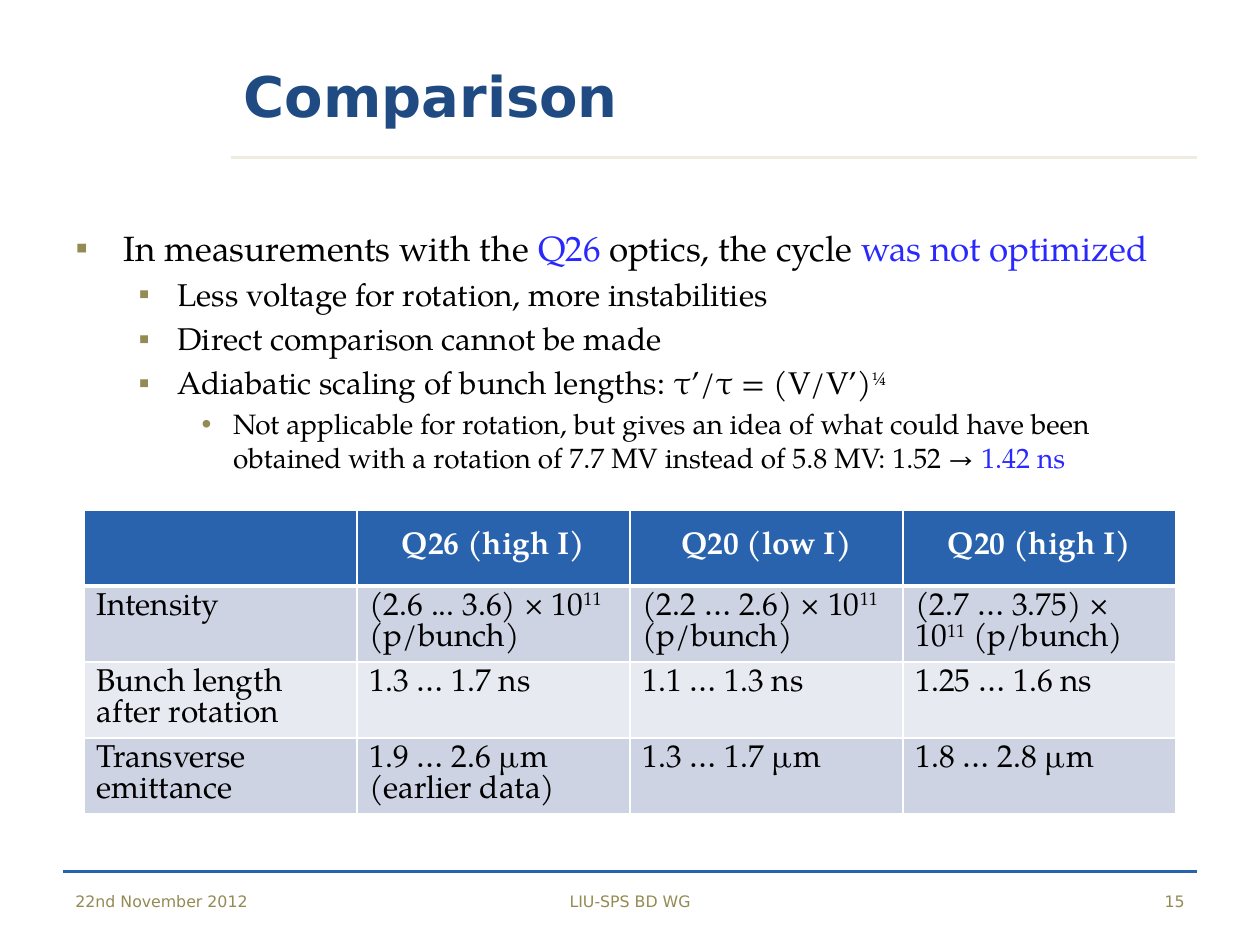
from lxml import etree
from pptx import Presentation
from pptx.dml.color import RGBColor
from pptx.enum.shapes import MSO_CONNECTOR
from pptx.enum.text import MSO_ANCHOR, PP_ALIGN
from pptx.oxml.ns import qn
from pptx.util import Inches, Pt

LEFT, CENTER, RIGHT = PP_ALIGN.LEFT, PP_ALIGN.CENTER, PP_ALIGN.RIGHT
MIDDLE, TOP = MSO_ANCHOR.MIDDLE, MSO_ANCHOR.TOP
STRAIGHT = MSO_CONNECTOR.STRAIGHT

COLORS = {
    "title": "1F4A82", "rule": "EEECE1", "accent": "2963AD", "muted": "948A54",
    "text": "000000", "mark": "2929FF", "white": "FFFFFF",
    "band_dark": "CDD3E3", "band_light": "E8EAF1",
}
SERIF, SANS = "TeX Gyre Pagella", "DejaVu Sans"
COLUMNS, ROWS = 120, 90

# Per list level: text size, left indent, hanging indent, bullet
LEVELS = [(20, 0.38, 0.38, "▪"), (18, 0.81, 0.31, "▪"), (16, 1.25, 0.25, "•")]

# A run is plain text or (text, style), the style being "mark" or "super"
BULLETS = [
    (0, ["In measurements with the ", ("Q26", "mark"), " optics, the cycle ",
         ("was not optimized", "mark")]),
    (1, ["Less voltage for rotation, more instabilities"]),
    (1, ["Direct comparison cannot be made"]),
    (1, ["Adiabatic scaling of bunch lengths: τ’/τ = (V/V’)", ("¼", "super")]),
    (2, ["Not applicable for rotation, but gives an idea of what could have been "
         "obtained with a rotation of 7.7 MV instead of 5.8 MV: 1.52 → ",
         ("1.42 ns", "mark")]),
]

# Each cell is a list of paragraphs, each paragraph a list of runs
POWER = ("11", "super")
HEADER = ["", "Q26 (high I)", "Q20 (low I)", "Q20 (high I)"]
RESULTS = [
    [[["Intensity"]],
     [["(2.6 ... 3.6) × 10", POWER], ["(p/bunch)"]],
     [["(2.2 … 2.6) × 10", POWER, " (p/bunch)"]],
     [["(2.7 … 3.75) × 10", POWER, " (p/bunch)"]]],
    [[["Bunch length after rotation"]], [["1.3 … 1.7 ns"]],
     [["1.1 … 1.3 ns"]], [["1.25 … 1.6 ns"]]],
    [[["Transverse emittance"]], [["1.9 … 2.6 µm (earlier data)"]],
     [["1.3 … 1.7 µm"]], [["1.8 … 2.8 µm"]]],
]


def rgb(name):
    return RGBColor.from_string(COLORS[name])


class SlideBuilder:
    def __init__(self, deck):
        self.deck = deck
        self.page = deck.slides.add_slide(deck.slide_layouts[1])

    def x(self, columns):
        return round(self.deck.slide_width * columns / COLUMNS)

    def y(self, rows):
        return round(self.deck.slide_height * rows / ROWS)

    def area(self, left, top, width, height):
        return self.x(left), self.y(top), self.x(width), self.y(height)

    def place(self, box, area, anchor):
        box.left, box.top, box.width, box.height = self.area(*area)
        box.text_frame.word_wrap = True
        box.text_frame.vertical_anchor = anchor
        return box.text_frame

    def add_runs(self, para, runs, size, font=SERIF, color="text", bold=False):
        for item in runs:
            text, style = (item, None) if isinstance(item, str) else item
            span = para.add_run()
            span.text = text
            span.font.size, span.font.name, span.font.bold = Pt(size), font, bold
            span.font.color.rgb = rgb("mark" if style == "mark" else color)
            if style == "super":
                span.font._element.set("baseline", "30000")

    def paragraphs(self, frame, count):
        return [frame.paragraphs[0]] + [frame.add_paragraph() for _ in range(count - 1)]

    def title(self, text, area):
        para = self.place(self.page.shapes.title, area, MIDDLE).paragraphs[0]
        para.alignment, para.line_spacing = LEFT, Pt(36)
        self.add_runs(para, [text], 32, SANS, "title", True)

    def bullets(self, items, area):
        frame = self.place(self.page.placeholders[1], area, TOP)
        for index, para in enumerate(self.paragraphs(frame, len(items))):
            level, runs = items[index]
            size, indent, hanging, symbol = LEVELS[level]
            para.level = level
            para.space_before = Pt(0.2 * size if index else 0)
            props = para._p.get_or_add_pPr()
            props.set("marL", str(Inches(indent)))
            props.set("indent", str(-Inches(hanging)))
            tint = etree.SubElement(props, qn("a:buClr"))
            etree.SubElement(tint, qn("a:srgbClr"), val=COLORS["muted"])
            etree.SubElement(props, qn("a:buChar"), char=symbol)
            self.add_runs(para, runs, size)

    def label(self, text, area, align):
        box = self.page.shapes.add_textbox(*self.area(*area))
        para = self.place(box, area, MIDDLE).paragraphs[0]
        para.alignment = align
        self.add_runs(para, [text], 9, SANS, "muted")

    def rule(self, start, end, row, color, width):
        line = self.page.shapes.add_connector(
            STRAIGHT, self.x(start), self.y(row), self.x(end), self.y(row))
        line.line.color.rgb, line.line.width = rgb(color), Pt(width)
        etree.SubElement(line._element.spPr, qn("a:effectLst"))

    def borders(self, cell, bottom):
        props = cell._tc.get_or_add_tcPr()
        sides = [("a:lnL", 1), ("a:lnR", 1), ("a:lnT", 1), ("a:lnB", bottom)]
        for position, (side, width) in enumerate(sides):
            edge = etree.Element(qn(side), w=str(Pt(width)))
            fill = etree.SubElement(edge, qn("a:solidFill"))
            etree.SubElement(fill, qn("a:srgbClr"), val=COLORS["white"])
            props.insert(position, edge)

    def cell(self, cell, content, fill, heading=False):
        cell.fill.solid()
        cell.fill.fore_color.rgb = rgb(fill)
        self.borders(cell, 3 if heading else 1)
        for para, runs in zip(self.paragraphs(cell.text_frame, len(content)), content):
            if heading:
                para.alignment, para.line_spacing = CENTER, 1.5
            self.add_runs(para, [run for run in runs if run], 18,
                          color="white" if heading else "text", bold=heading)

    def table(self, header, body, area):
        table = self.page.shapes.add_table(
            len(body) + 1, len(header), *self.area(*area)).table
        for column, text in enumerate(header):
            self.cell(table.cell(0, column), [[text]], "accent", True)
        for row, contents in enumerate(body, 1):
            fill = "band_dark" if row % 2 else "band_light"
            for column, content in enumerate(contents):
                self.cell(table.cell(row, column), content, fill)


def main():
    deck = Presentation()
    deck.slide_width, deck.slide_height = Inches(10), Inches(7.5)
    slide = SlideBuilder(deck)

    # Frame lines
    slide.rule(6, 114, 83, "accent", 2)
    slide.rule(22, 114, 15, "rule", 1.25)

    # Title, list and comparison table
    slide.title("Comparison", (22, 3.6, 92, 11.4))
    slide.bullets(BULLETS, (6, 21, 108, 26))
    slide.table(HEADER, RESULTS, (8, 48.6, 104, 28.8))

    # Footer
    slide.label("22nd November 2012", (6, 83.4, 28, 4.8), LEFT)
    slide.label("LIU-SPS BD WG", (41, 83.4, 38, 4.8), CENTER)
    slide.label("15", (86, 83.4, 28, 4.8), RIGHT)

    deck.save("out.pptx")


if __name__ == "__main__":
    main()
